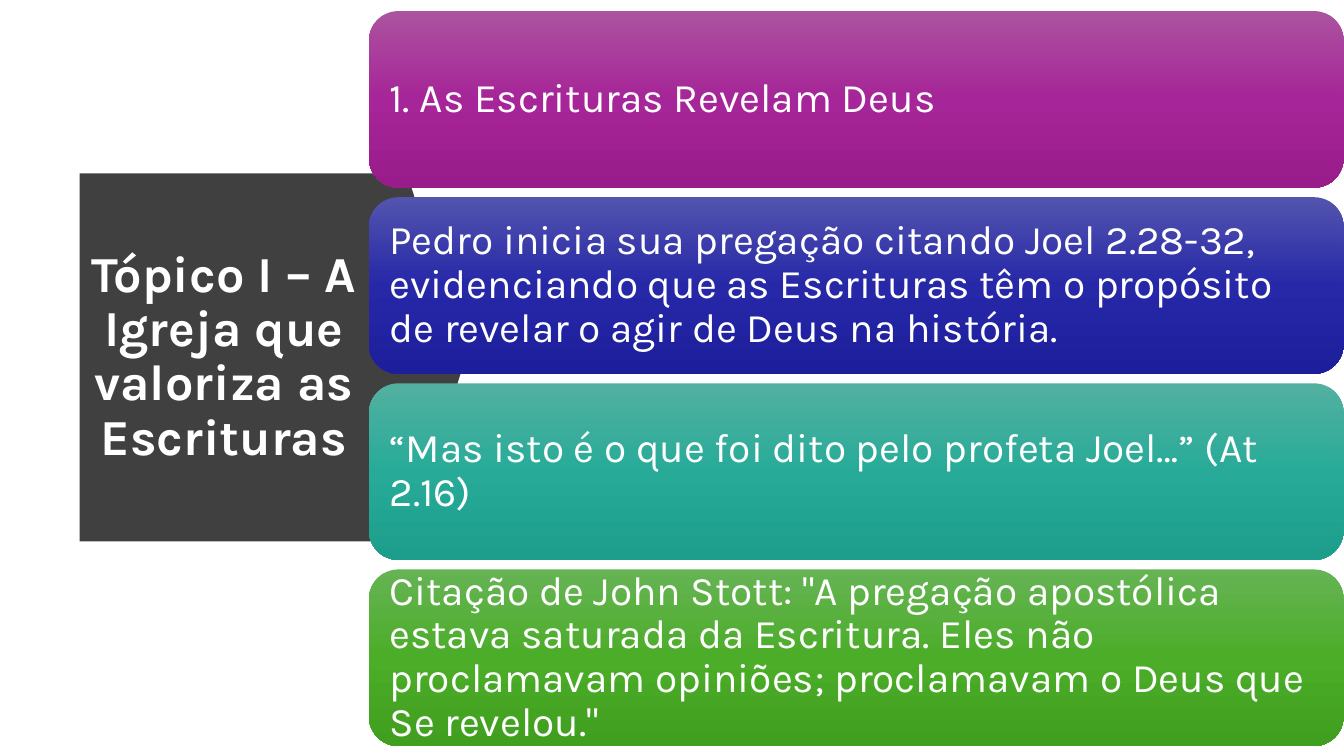
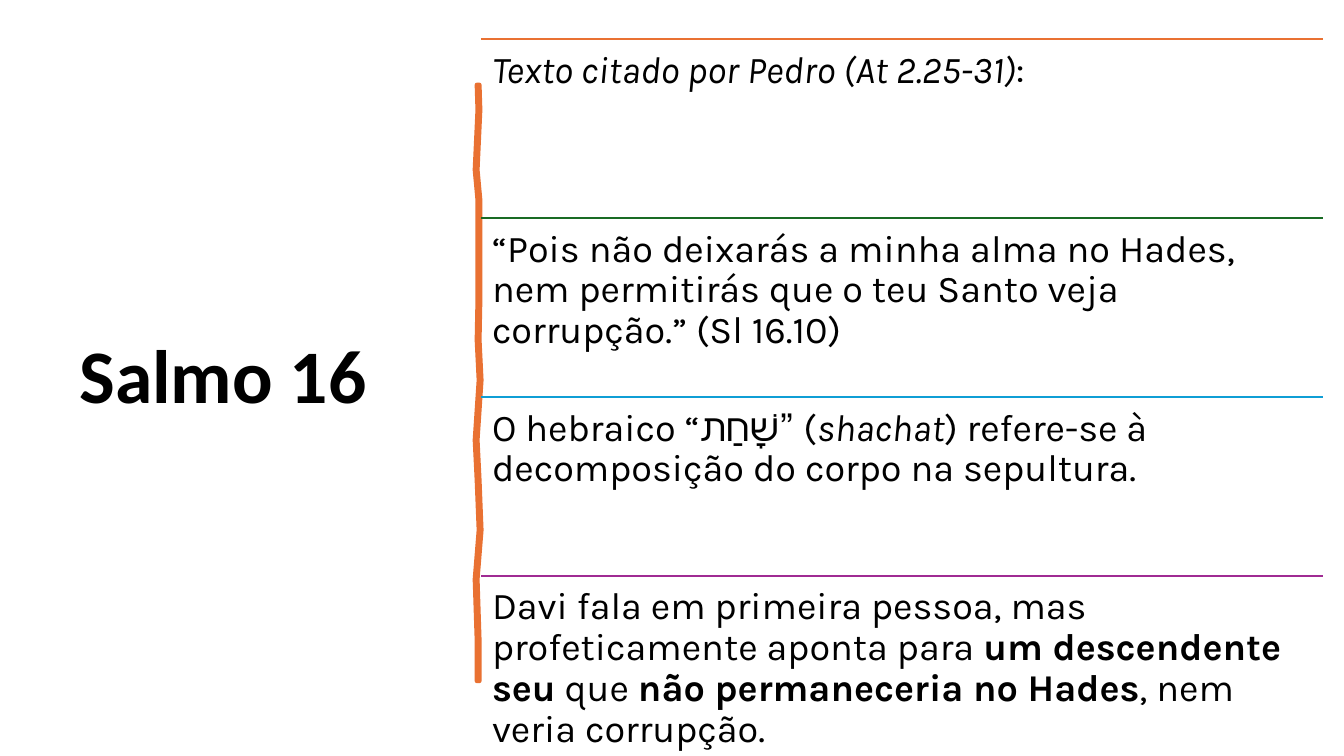
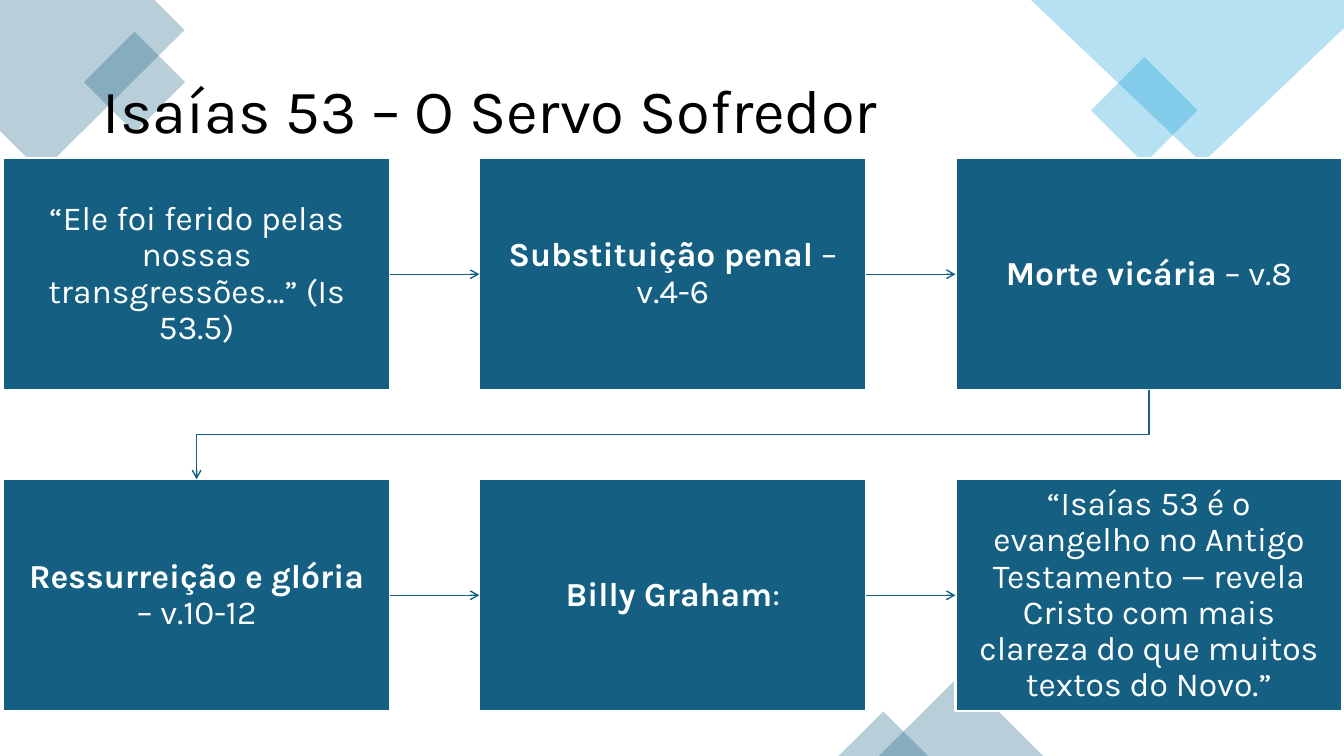
from copy import deepcopy
from dataclasses import dataclass
from itertools import pairwise
from typing import Any, NamedTuple

from lxml.etree import SubElement
from pptx import Presentation
from pptx.dml.color import RGBColor
from pptx.enum.shapes import MSO_CONNECTOR, MSO_SHAPE
from pptx.enum.text import MSO_ANCHOR, MSO_AUTO_SIZE, PP_ALIGN
from pptx.oxml.ns import qn
from pptx.util import Cm, Pt

COLORS = {
    "white": "FFFFFF", "black": "000000", "charcoal": "404040",
    "teal": "156082", "sky": "0F9ED5", "orange": "E97132",
    "green": "196B24", "purple": "A02B93",
}
BODY_FONT = "Karla"
TITLE_ONLY = 5
BOTTOM, LEFT, TOP, RIGHT = 2, 1, 0, 3


class Box(NamedTuple):
    left: float
    top: float
    width: float
    height: float

    def lengths(self) -> tuple[Cm, ...]:
        return tuple(Cm(value) for value in self)


class Span(NamedTuple):
    text: str
    bold: bool = False
    italic: bool = False


@dataclass(frozen=True)
class TextStyle:
    size: float
    color: str
    font: str = BODY_FONT
    align: Any = PP_ALIGN.LEFT
    anchor: Any = MSO_ANCHOR.MIDDLE
    inset_x: float = 0.25
    inset_y: float = 0.13


@dataclass(frozen=True)
class Card:
    spans: list[Span]
    gradient: tuple[str, str, str]


@dataclass(frozen=True)
class Row:
    spans: list[Span]
    color: str


class Ornament(NamedTuple):
    kind: Any
    box: Box
    color: str
    rotation: float = 0


CARD_STYLE = TextStyle(29, "white", inset_x=0.3, inset_y=0.3)
ROW_STYLE = TextStyle(27, "black", anchor=MSO_ANCHOR.TOP, inset_x=0.28, inset_y=0.28)
STEP_STYLE = TextStyle(24, "white", align=PP_ALIGN.CENTER, inset_x=0.48, inset_y=0.5)

CARDS = [
    Card([Span("1. As Escrituras Revelam Deus")], ("AC53A0", "A62598", "991C8B")),
    Card([Span("Pedro inicia sua pregação citando Joel 2.28-32, evidenciando que as "
               "Escrituras têm o propósito de revelar o agir de Deus na história.")],
         ("5354AE", "2628A8", "1D1E9B")),
    Card([Span("“Mas isto é o que foi dito pelo profeta Joel…” (At 2.16)")],
         ("53B0A1", "27AB98", "1D9D8B")),
    Card([Span('Citação de John Stott: "A pregação apostólica estava saturada da '
               "Escritura. Eles não proclamavam opiniões; proclamavam o Deus que "
               'Se revelou."')],
         ("66B354", "4BAD28", "409F1E")),
]

ROWS = [
    Row([Span("Texto citado por Pedro (At 2.25-31)", italic=True), Span(":")], "orange"),
    Row([Span("“Pois não deixarás a minha alma no Hades, nem permitirás que o teu "
              "Santo veja corrupção.” (Sl 16.10)")], "green"),
    Row([Span("O hebraico “שָׁחַת” ("), Span("shachat", italic=True),
         Span(") refere-se à decomposição do corpo na sepultura.")], "sky"),
    Row([Span("Davi fala em primeira pessoa, mas profeticamente aponta para "),
         Span("um descendente seu", bold=True), Span(" que "),
         Span("não permaneceria no Hades", bold=True),
         Span(", nem veria corrupção.")], "purple"),
]

STEPS = [
    [Span("“Ele foi ferido pelas nossas transgressões…” (Is 53.5)")],
    [Span("Substituição penal", bold=True), Span(" – v.4-6")],
    [Span("Morte vicária", bold=True), Span(" – v.8")],
    [Span("Ressurreição e glória", bold=True), Span(" – v.10-12")],
    [Span("Billy Graham", bold=True), Span(":")],
    [Span("“Isaías 53 é o evangelho no Antigo Testamento — revela Cristo com mais "
          "clareza do que muitos textos do Novo.”")],
]

BRUSH_CENTRE = [
    (12.05, 2.14), (12.07, 2.77), (12, 4.28), (12.07, 5.04), (12.07, 7.56),
    (12.05, 8.57), (12.1, 9.58), (12, 11.09), (12.05, 12.1), (12.1, 13.36),
    (12, 14.6), (12.05, 16.13), (12.05, 17.16),
]
BRUSH_HALF_WIDTH = 0.03

CORNERS = [
    ("teal", [(3.89, 0), (0, 0), (0, 3.3), (1.04, 4.34), (4.65, 0.76)]),
    ("sky", [(33.87, 0), (25.98, 0), (30.3, 4.11), (33.87, 0.71)]),
]
ORNAMENTS = [
    Ornament(MSO_SHAPE.RECTANGLE, Box(2.49, 1.17, 1.8, 1.8), "teal", 315),
    Ornament(MSO_SHAPE.RECTANGLE, Box(27.89, 1.83, 1.9, 1.9), "sky", 315),
    Ornament(MSO_SHAPE.ISOSCELES_TRIANGLE, Box(22.15, 16.99, 4.14, 2.06), "teal"),
    Ornament(MSO_SHAPE.ISOSCELES_TRIANGLE, Box(21.13, 17.93, 2.26, 1.12), "teal"),
]


def rgb(name: str) -> RGBColor:
    return RGBColor.from_string(COLORS[name])


def set_all(target: Any, values: dict[str, Any]) -> None:
    for name, value in values.items():
        setattr(target, name, value)


def write(shape: Any, spans: list[Span], style: TextStyle) -> None:
    frame = shape.text_frame
    set_all(frame, {
        "word_wrap": True, "auto_size": MSO_AUTO_SIZE.NONE,
        "vertical_anchor": style.anchor,
        "margin_left": Cm(style.inset_x), "margin_right": Cm(style.inset_x),
        "margin_top": Cm(style.inset_y), "margin_bottom": Cm(style.inset_y),
    })
    paragraph = frame.paragraphs[0]
    set_all(paragraph, {"alignment": style.align, "line_spacing": 0.9})
    for span in spans:
        run = paragraph.add_run()
        run.text = span.text
        set_all(run.font, {"name": style.font, "size": Pt(style.size),
                           "bold": span.bold, "italic": span.italic})
        run.font.color.rgb = rgb(style.color)


def add_title(slide: Any, box: Box, span: Span, style: TextStyle) -> None:
    """Place the title in front of everything drawn so far."""
    title = slide.shapes.title
    set_all(title, dict(zip(("left", "top", "width", "height"), box.lengths())))
    write(title, [span], style)
    title.element.getparent().append(title.element)


def paint(shape: Any, color: str, opacity: int = 100) -> None:
    """Give a shape a flat fill and neither line nor shadow."""
    shape.shadow.inherit = False
    shape.fill.solid()
    shape.fill.fore_color.rgb = rgb(color)
    shape.line.fill.background()
    if opacity < 100:
        value = shape.element.spPr.find(qn("a:solidFill")).find(qn("a:srgbClr"))
        SubElement(value, qn("a:alpha"), val=str(opacity * 1000))


def paint_gradient(shape: Any, colors: tuple[str, ...]) -> None:
    """Fill from top to bottom with three evenly spaced colours."""
    shape.shadow.inherit = False
    shape.line.fill.background()
    shape.fill.gradient()
    shape.fill.gradient_angle = 270
    stop_list = shape.element.spPr.find(qn("a:gradFill")).find(qn("a:gsLst"))
    stop_list.append(deepcopy(stop_list[-1]))
    for index, (stop, color) in enumerate(zip(shape.fill.gradient_stops, colors)):
        stop.position = index / 2
        stop.color.rgb = RGBColor.from_string(color)


def add_polygon(slide: Any, points: list[tuple[float, float]]) -> Any:
    start, *others = [(Cm(x), Cm(y)) for x, y in points]
    builder = slide.shapes.build_freeform(*start)
    builder.add_line_segments(others, close=True)
    return builder.convert_to_shape()


def style_connector(connector: Any, color: str, width: float, arrow: bool = False) -> None:
    connector.line.color.rgb = rgb(color)
    connector.line.width = Pt(width)
    properties = connector.element.spPr
    if arrow:
        SubElement(properties.find(qn("a:ln")), qn("a:tailEnd"), type="arrow")
    SubElement(properties, qn("a:effectLst"))


def connect_steps(slide: Any, source: Any, target: Any) -> None:
    """Join neighbours with an arrow, bent when it leads to the next row."""
    same_row = source.top == target.top
    kind = MSO_CONNECTOR.STRAIGHT if same_row else MSO_CONNECTOR.ELBOW
    connector = slide.shapes.add_connector(kind, 0, 0, 0, 0)
    connector.begin_connect(source, RIGHT if same_row else BOTTOM)
    connector.end_connect(target, LEFT if same_row else TOP)
    if not same_row:
        # A vertical-horizontal-vertical bend is the preset turned by 90 degrees.
        across, down = connector.width, connector.height
        shift = (across - down) // 2
        set_all(connector, {"left": connector.left + shift, "top": connector.top - shift,
                            "width": down, "height": across})
        frame = connector.element.spPr.find(qn("a:xfrm"))
        frame.attrib.pop("flipH", None)
        frame.set("rot", "5400000")
    style_connector(connector, "teal", 1, arrow=True)


def build_topic(slide: Any) -> None:
    arrow = slide.shapes.add_shape(MSO_SHAPE.DOWN_ARROW, *Box(2.24, 4.14, 9.27, 9.73).lengths())
    arrow.rotation = 270
    arrow.adjustments[0], arrow.adjustments[1] = 1, 0.16
    paint(arrow, "charcoal")
    add_title(slide, Box(1.98, 5.46, 7.32, 7.09),
              Span("Tópico I – A Igreja que valoriza as Escrituras", bold=True),
              TextStyle(36, "white", align=PP_ALIGN.CENTER))
    height, gap = 4.45, 0.24
    for index, card in enumerate(CARDS):
        box = Box(9.3, 0.28 + index * (height + gap), 24.56, height)
        shape = slide.shapes.add_shape(MSO_SHAPE.ROUNDED_RECTANGLE, *box.lengths())
        paint_gradient(shape, card.gradient)
        write(shape, card.spans, CARD_STYLE)


def build_psalm(slide: Any) -> None:
    add_title(slide, Box(1.75, 1.78, 9.5, 15.52), Span("Salmo 16", bold=True),
              TextStyle(54, "black", font="Calibri"))
    right_edge = [(x + BRUSH_HALF_WIDTH, y) for x, y in BRUSH_CENTRE]
    left_edge = [(x - BRUSH_HALF_WIDTH, y) for x, y in reversed(BRUSH_CENTRE)]
    brush = add_polygon(slide, right_edge + left_edge)
    paint(brush, "orange")
    brush.line.color.rgb = rgb("orange")
    brush.line.width = Pt(3.25)
    for index, row in enumerate(ROWS):
        box = Box(12.12, 0.99 + index * 4.51, 21.21, 4.51)
        left, top, width, _ = box.lengths()
        rule = slide.shapes.add_connector(MSO_CONNECTOR.STRAIGHT, left, top, left + width, top)
        style_connector(rule, row.color, 1.5)
        write(slide.shapes.add_textbox(*box.lengths()), row.spans, ROW_STYLE)


def build_servant(slide: Any) -> None:
    for color, points in CORNERS:
        paint(add_polygon(slide, points), color, 30)
    for ornament in ORNAMENTS:
        shape = slide.shapes.add_shape(ornament.kind, *ornament.box.lengths())
        shape.rotation = ornament.rotation
        paint(shape, ornament.color, 30)
    add_title(slide, Box(2.34, 1.02, 29.21, 3.68), Span("Isaías 53 – O Servo Sofredor"),
              TextStyle(44, "black"))
    width, height, gap, columns = 9.75, 5.84, 2.25, 3
    boxes = []
    for index, spans in enumerate(STEPS):
        row, column = divmod(index, columns)
        box = Box(0.08 + column * (width + gap), 3.99 + row * (height + gap), width, height)
        shape = slide.shapes.add_shape(MSO_SHAPE.RECTANGLE, *box.lengths())
        paint(shape, "teal")
        shape.line.color.rgb = rgb("white")
        shape.line.width = Pt(1.5)
        write(shape, spans, STEP_STYLE)
        boxes.append(shape)
    for source, target in pairwise(boxes):
        connect_steps(slide, source, target)


def main() -> None:
    presentation = Presentation()
    presentation.slide_width, presentation.slide_height = Cm(33.87), Cm(19.05)
    for build in (build_topic, build_psalm, build_servant):
        build(presentation.slides.add_slide(presentation.slide_layouts[TITLE_ONLY]))
    presentation.save("out.pptx")


if __name__ == "__main__":
    main()
